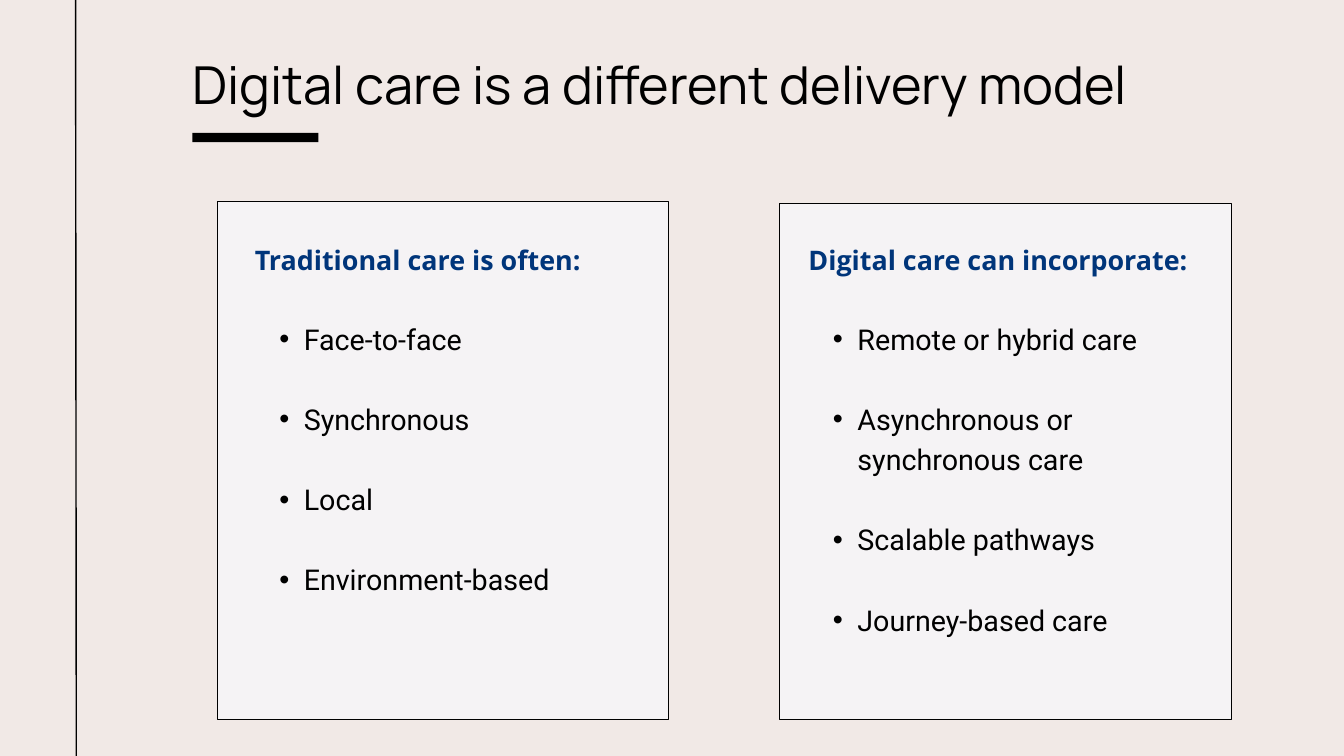
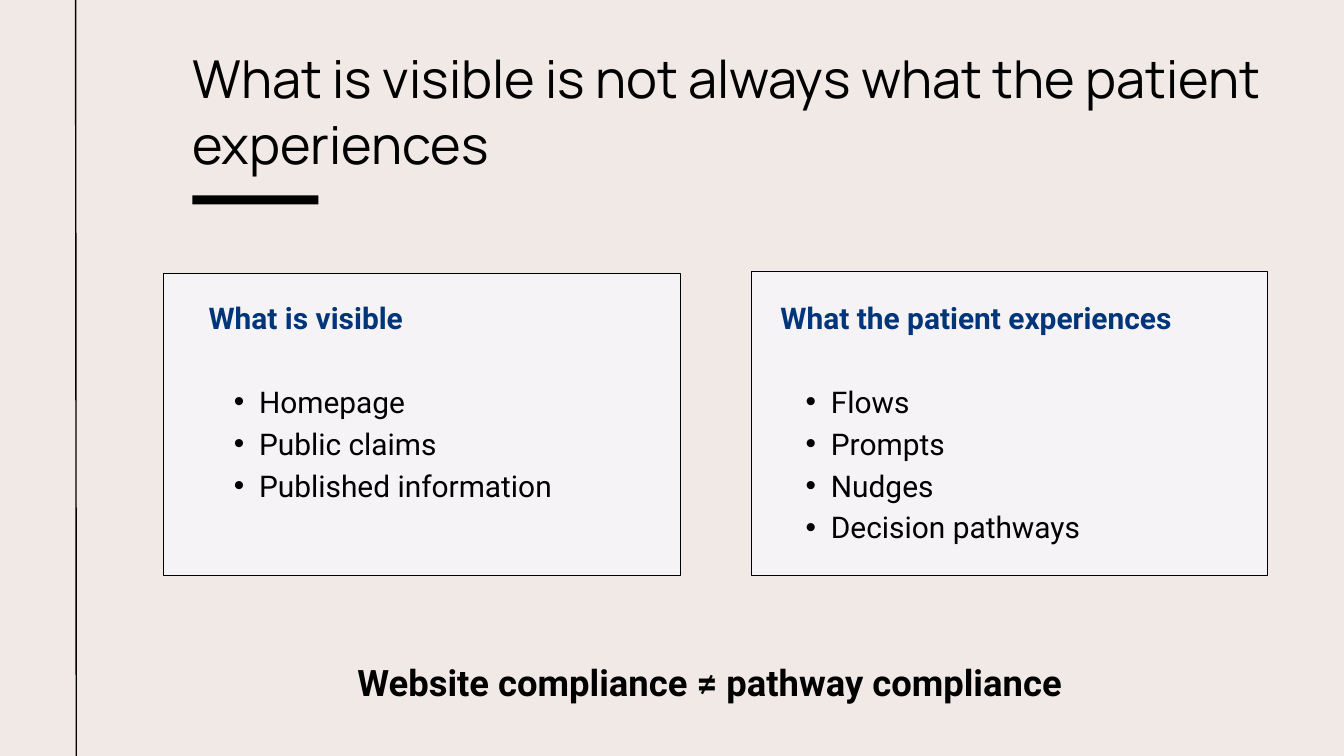
from pptx import Presentation
from pptx.dml.color import RGBColor
from pptx.enum.shapes import MSO_CONNECTOR, MSO_SHAPE
from pptx.enum.text import MSO_AUTO_SIZE, PP_ALIGN
from pptx.oxml.ns import qn
from pptx.util import Emu, Pt
from lxml.etree import SubElement

PAGE_COLOR = RGBColor(0xF1, 0xE9, 0xE6)
CARD_COLOR = RGBColor(0xF5, 0xF3, 0xF5)
HEADING_COLOR = RGBColor(0x00, 0x35, 0x7A)
BLACK = RGBColor(0x00, 0x00, 0x00)

TITLE_FONT = "Manrope"
HEADING_FONT = "Open Sans"
BODY_FONT = "Roboto"

EMU_PER_PX = 9525
PAGE_WIDTH, PAGE_HEIGHT = 1920, 1080
TITLE_LEFT = 275


def px(length):
    return Emu(length * EMU_PER_PX)


def add_slide(presentation):
    slide = presentation.slides.add_slide(presentation.slide_layouts[6])
    fill = slide.background.fill
    fill.solid()
    fill.fore_color.rgb = PAGE_COLOR
    return slide


def add_rectangle(slide, box, color, outlined=False):
    shape = slide.shapes.add_shape(MSO_SHAPE.RECTANGLE, *map(px, box))
    shape.shadow.inherit = False
    shape.fill.solid()
    shape.fill.fore_color.rgb = color
    if outlined:
        shape.line.color.rgb = BLACK
        shape.line.width = Pt(0.75)
    else:
        shape.line.fill.background()


def add_margin_line(slide):
    line = slide.shapes.add_connector(
        MSO_CONNECTOR.STRAIGHT, px(109), px(PAGE_HEIGHT), px(108), px(0))
    line.line.color.rgb = BLACK
    line.line.width = Pt(1.5)
    SubElement(line._element.spPr, qn("a:effectLst"))


def add_text_frame(slide, box):
    frame = slide.shapes.add_textbox(*map(px, box)).text_frame
    frame.margin_left = frame.margin_top = frame.margin_right = frame.margin_bottom = 0
    frame.word_wrap = True
    frame.auto_size = MSO_AUTO_SIZE.SHAPE_TO_FIT_TEXT
    return frame


def set_bullet(paragraph, hang):
    paragraph.level = 1
    properties = paragraph._p.get_or_add_pPr()
    properties.set("marL", str(px(2 * hang)))
    properties.set("indent", str(px(-hang)))
    SubElement(properties, qn("a:buFont"), typeface="Arial")
    SubElement(properties, qn("a:buChar"), char="•")


def write(frame, text, *, size, spacing, font=BODY_FONT, color=BLACK, bold=False,
          align=PP_ALIGN.LEFT, before=0, hang=0):
    paragraph = frame.paragraphs[0]
    if paragraph.runs:
        paragraph = frame.add_paragraph()
    if hang:
        set_bullet(paragraph, hang)
    paragraph.alignment = align
    paragraph.line_spacing = Pt(spacing)
    if before:
        paragraph.space_before = Pt(before)
    run = paragraph.add_run()
    run.text = text
    run.font.name = font
    run.font.size = Pt(size)
    run.font.bold = bold
    run.font.color.rgb = color


def add_title(slide, text, box, bar_top):
    add_rectangle(slide, (TITLE_LEFT, bar_top, 180, 13), BLACK)
    write(add_text_frame(slide, box), text, size=56, spacing=71.1, font=TITLE_FONT)


def add_spaced_card(slide, heading, items, card, heading_box, list_box):
    add_rectangle(slide, card, CARD_COLOR, outlined=True)
    write(add_text_frame(slide, heading_box), heading, size=28.8, spacing=40.3,
          font=HEADING_FONT, color=HEADING_COLOR, bold=True)
    frame = add_text_frame(slide, list_box)
    for index, item in enumerate(items):
        write(frame, item, size=30.7, spacing=43, before=43 if index else 0, hang=35)


def add_compact_card(slide, heading, items, card, text_box):
    add_rectangle(slide, card, CARD_COLOR, outlined=True)
    frame = add_text_frame(slide, text_box)
    style = {"size": 32, "spacing": 44.8}
    write(frame, heading, color=HEADING_COLOR, bold=True, **style)
    for index, item in enumerate(items):
        write(frame, item, align=PP_ALIGN.JUSTIFY, before=0 if index else 44.8,
              hang=36, **style)


def build_delivery_model(presentation):
    slide = add_slide(presentation)
    add_title(slide, "Digital care is a different delivery model",
              (TITLE_LEFT, 69, 1484, 99), bar_top=190)
    add_spaced_card(
        slide, "Traditional care is often:",
        ["Face-to-face", "Synchronous", "Local", "Environment-based"],
        (310, 288, 645, 740), (364, 340, 514, 51), (364, 451, 514, 451))
    add_spaced_card(
        slide, "Digital care can incorporate:",
        ["Remote or hybrid care", "Asynchronous or synchronous care",
         "Scalable pathways", "Journey-based care"],
        (1114, 290, 645, 738), (1155, 340, 571, 51), (1155, 451, 494, 508))
    add_margin_line(slide)


def build_patient_view(presentation):
    slide = add_slide(presentation)
    add_title(slide, "What is visible is not always what the patient experiences",
              (TITLE_LEFT, 61, 1624, 193), bar_top=279)
    add_compact_card(
        slide, "What is visible",
        ["Homepage", "Public claims", "Published information"],
        (234, 391, 738, 431), (298, 420, 566, 299))
    add_compact_card(
        slide, "What the patient experiences",
        ["Flows", "Prompts", "Nudges", "Decision pathways"],
        (1073, 387, 738, 435), (1115, 420, 661, 359))
    write(add_text_frame(slide, (455, 933, 1118, 69)),
          "Website compliance ≠ pathway compliance",
          size=39, spacing=54.6, bold=True, align=PP_ALIGN.CENTER)
    add_margin_line(slide)


def main():
    presentation = Presentation()
    presentation.slide_width = px(PAGE_WIDTH)
    presentation.slide_height = px(PAGE_HEIGHT)
    build_delivery_model(presentation)
    build_patient_view(presentation)
    presentation.save("out.pptx")


if __name__ == "__main__":
    main()
